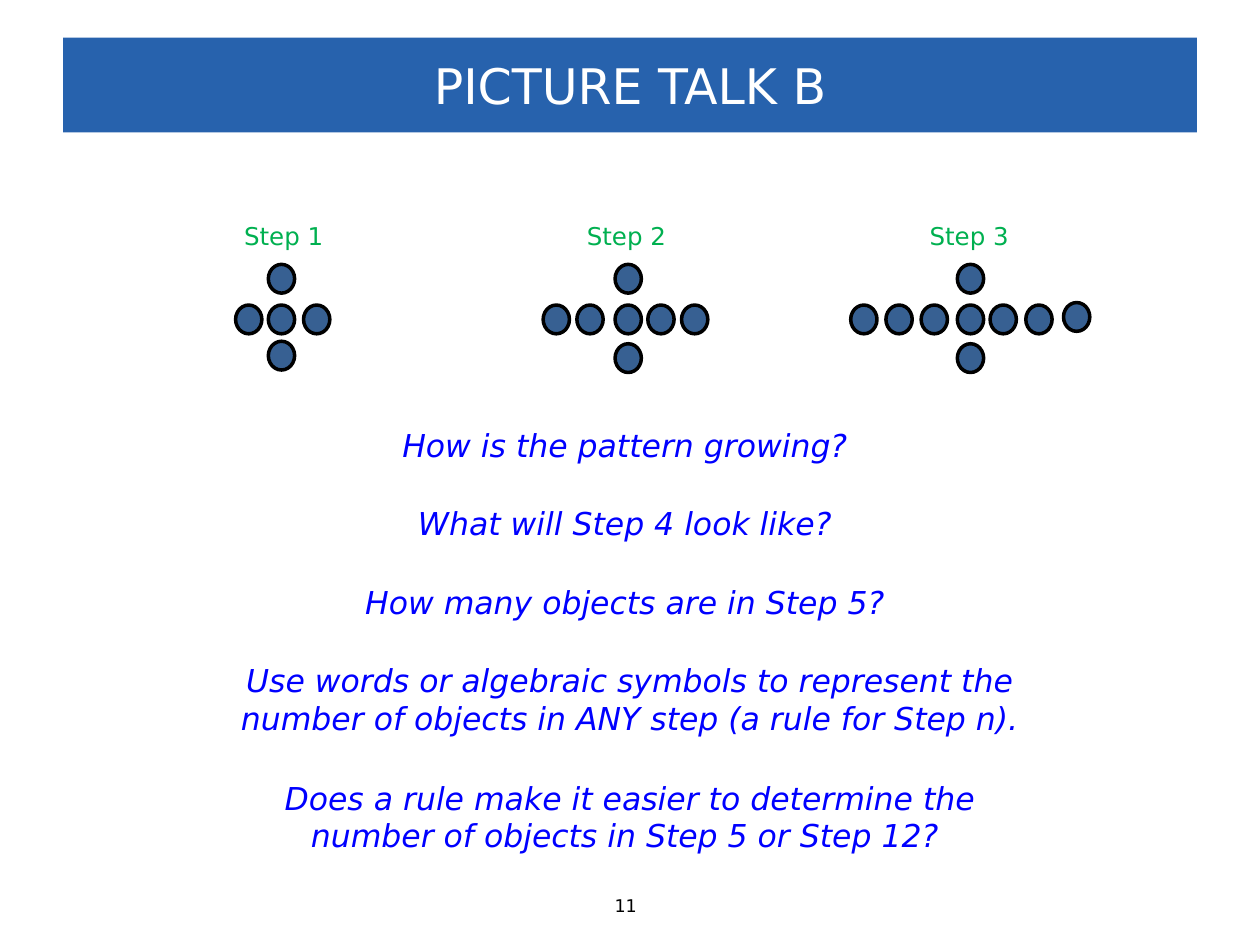
from pptx import Presentation
from pptx.dml.color import RGBColor
from pptx.enum.shapes import MSO_SHAPE
from pptx.enum.text import MSO_ANCHOR, PP_ALIGN
from pptx.util import Cm, Pt

OVAL = MSO_SHAPE.OVAL
MIDDLE = MSO_ANCHOR.MIDDLE
LEFT, CENTER = PP_ALIGN.LEFT, PP_ALIGN.CENTER
FONT = "DejaVu Sans"
WHITE = RGBColor(0xFF, 0xFF, 0xFF)
BLACK = RGBColor(0, 0, 0)
BAR = RGBColor(0x27, 0x62, 0xAD)
INK = RGBColor(0, 0, 0xFF)
GREEN = RGBColor(0, 0xB0, 0x50)
DOT = RGBColor(0x37, 0x60, 0x92)
WIDE = 25.4


def style(frame, text, size, color, align, italic=False):
    frame.text = text
    para = frame.paragraphs[0]
    para.alignment = align
    font = para.runs[0].font
    font.name, font.size, font.italic = FONT, Pt(size), italic
    font.color.rgb = color


def label(text, x, y, w, h, size, color, align, italic=False, wrap=True):
    box = slide.shapes.add_textbox(Cm(x), Cm(y), Cm(w), Cm(h))
    box.text_frame.word_wrap = wrap
    style(box.text_frame, text, size, color, align, italic)


deck = Presentation()
deck.slide_width, deck.slide_height = Cm(WIDE), Cm(19.05)
slide = deck.slides.add_slide(deck.slide_layouts[5])

title = slide.shapes.title
title.left, title.top, title.width, title.height = Cm(1.27), Cm(0.76), Cm(22.86), Cm(1.91)
title.fill.solid()
title.fill.fore_color.rgb = BAR
title.text_frame.vertical_anchor = MIDDLE
style(title.text_frame, "PICTURE TALK B", 28, WHITE, CENTER)

asks = [
    ("How is the pattern growing? ", 8.46, 10.34, 1.02),
    ("What will Step 4 look like? ", 10.03, 9.63, 1.02),
    ("How many objects are in Step 5? ", 11.63, 11.35, 1.02),
    ("Use words or algebraic symbols to represent the number of objects "
     "in ANY step (a rule for Step n).", 13.21, 17.02, 1.8),
    ("Does a rule make it easier to determine the number of objects "
     "in Step 5 or Step 12? ", 15.57, 14.81, 1.8),
]
for text, y, w, h in asks:
    label(text, (WIDE - w) / 2, y, w, h, 18, INK, CENTER, italic=True)

MID, TOP = 6.15, 5.33
steps = [
    ([4.75, 5.41, 6.12], 6.88),
    ([10.95, 11.63, 12.4, 13.06, 13.74], 6.93),
    ([17.15, 17.86, 18.57, 19.3, 19.96, 20.68, 21.44], 6.93),
]
for i, (row, low) in enumerate(steps):
    hub = row[len(row) // 2]
    spots = [(x, MID) for x in row] + [(hub, TOP), (hub, low)]
    if i == 2:
        spots[len(row) - 1] = (row[-1], 6.1)
    for x, y in spots:
        dot = slide.shapes.add_shape(OVAL, Cm(x), Cm(y), Cm(0.53), Cm(0.58))
        dot.shadow.inherit = False
        dot.fill.solid()
        dot.fill.fore_color.rgb = DOT
        dot.line.color.rgb = BLACK
        dot.line.width = Pt(2)
    label(f"Step {i + 1}", 4.67 + 6.91 * i, 4.34, 2.24, 0.86, 14, GREEN, LEFT)

label("11", 12.14, 17.91, 1.12, 0.69, 10, BLACK, LEFT, wrap=False)

deck.save("out.pptx")
